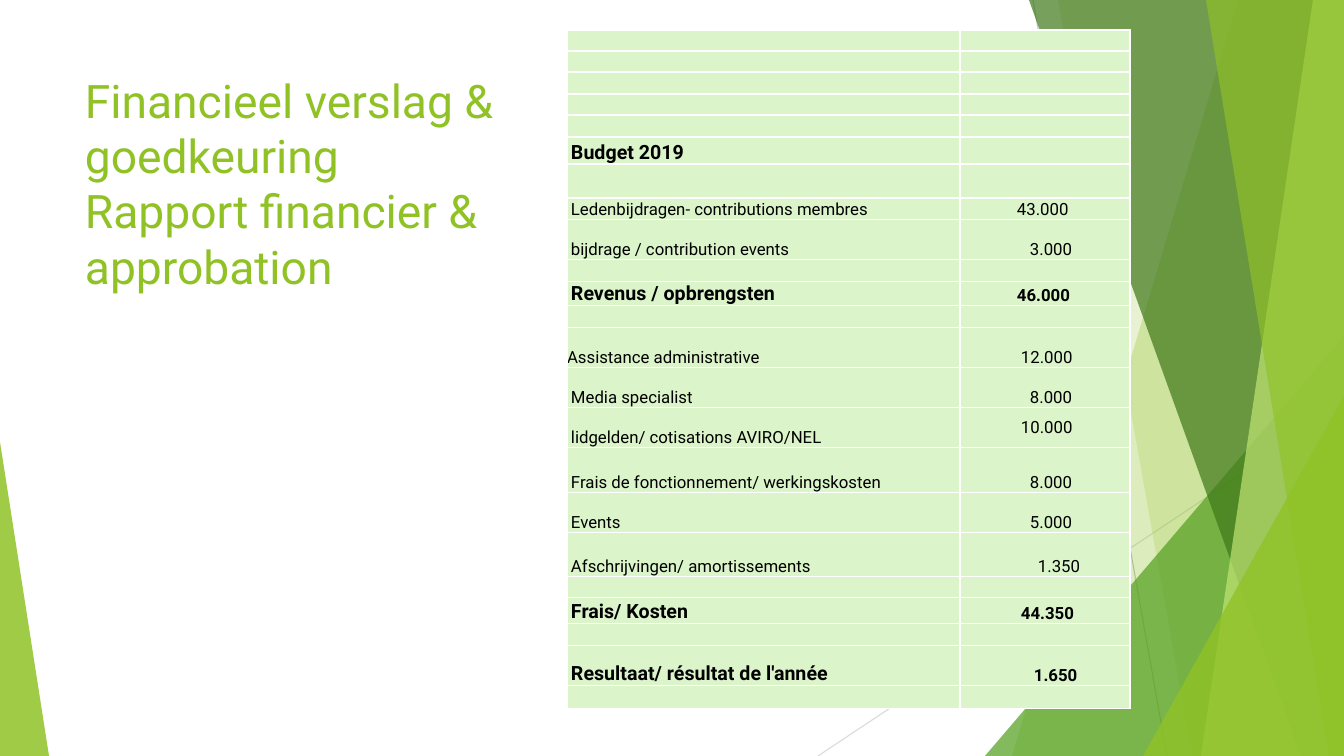
from lxml import etree
from pptx import Presentation
from pptx.dml.color import RGBColor
from pptx.enum import shapes, text
from pptx.oxml import ns
from pptx.util import Pt

SCALE = 914400 / 100.8
WIDTH, HEIGHT = 1344, 756
FONT = "Roboto"
GREEN = "90C226"
COLUMN_WIDTHS = (393, 170)

# row height, label, label inset, amount, amount inset, bold
BUDGET_ROWS = [
    (21,), (21,), (22,), (21,), (22,),
    (27, "Budget 2019", 4, "", 0, True),
    (34,),
    (22, "Ledenbijdragen- contributions membres", 4, "43.000", 57, False),
    (40, "bijdrage / contribution events", 4, "3.000", 70, False),
    (22,),
    (23, "Revenus / opbrengsten", 4, "46.000", 57, True),
    (22,),
    (40, "Assistance administrative", 0, "12.000", 61, False),
    (40, "Media specialist", 4, "8.000", 70, False),
    (40, "lidgelden/ cotisations AVIRO/NEL", 4, "10.000", 61, False),
    (45, "Frais de fonctionnement/ werkingskosten", 4, "8.000", 70, False),
    (40, "Events", 4, "5.000", 70, False),
    (44, "Afschrijvingen/ amortissements", 4, "1.350", 78, False),
    (21,),
    (26, "Frais/ Kosten", 4, "44.350", 61, True),
    (22,),
    (40, "Resultaat/ résultat de l'année", 4, "1.650", 74, True),
    (23,),
]


def px(length):
    return round(length * SCALE)


def color(hex_string):
    return RGBColor.from_string(hex_string)


def paint(shape, fill, opacity):
    """Fill a shape with a translucent colour, without outline or shadow."""
    shape.shadow.inherit = False
    shape.line.fill.background()
    shape.fill.solid()
    shape.fill.fore_color.rgb = color(fill)
    srgb = shape.fill._xPr.find(".//" + ns.qn("a:srgbClr"))
    etree.SubElement(srgb, ns.qn("a:alpha")).set("val", str(opacity * 1000))


def add_line(slide, start, end, line_color):
    line = slide.shapes.add_connector(
        shapes.MSO_CONNECTOR.STRAIGHT, *map(px, start + end))
    line.line.color.rgb = color(line_color)
    line.line.width = Pt(0.75)
    etree.SubElement(line._element.spPr, ns.qn("a:effectLst"))


def add_band(slide, top_x, bottom_x, fill, opacity):
    """Add a band from a slanted left edge to the right side of the slide."""
    builder = slide.shapes.build_freeform(top_x, 0, scale=SCALE)
    builder.add_line_segments([(WIDTH, 0), (WIDTH, HEIGHT), (bottom_x, HEIGHT)])
    paint(builder.convert_to_shape(), fill, opacity)


def add_triangle(slide, left, top, width, apex, fill, opacity):
    """Add a triangle standing on the bottom edge of the slide."""
    triangle = slide.shapes.add_shape(
        shapes.MSO_SHAPE.ISOSCELES_TRIANGLE,
        px(left), px(top), px(width), px(HEIGHT - top))
    triangle.adjustments[0] = apex
    paint(triangle, fill, opacity)


def write(paragraph, words, size, font_color="000000", bold=False):
    paragraph.alignment = text.PP_ALIGN.LEFT
    for index, line in enumerate(words.split("\n")):
        if index:
            paragraph.add_line_break()
        run = paragraph.add_run()
        run.text = line
        run.font.name = FONT
        run.font.size = Pt(size)
        run.font.bold = bold
        run.font.color.rgb = color(font_color)


def add_title(slide, words):
    frame = slide.shapes.add_textbox(px(75), px(67), px(545), px(145)).text_frame
    frame.word_wrap = True
    frame.vertical_anchor = text.MSO_ANCHOR.TOP
    write(frame.paragraphs[0], words, size=33, font_color=GREEN)


def add_borders(cell):
    properties = cell._tc.get_or_add_tcPr()
    for index, side in enumerate(("a:lnL", "a:lnR", "a:lnT", "a:lnB")):
        border = etree.Element(ns.qn(side), w=str(Pt(1)))
        fill = etree.SubElement(border, ns.qn("a:solidFill"))
        etree.SubElement(fill, ns.qn("a:srgbClr")).set("val", "FFFFFF")
        properties.insert(index, border)


def fill_cell(cell, words, inset, size, bold):
    cell.margin_left = px(inset)
    cell.margin_right = cell.margin_top = cell.margin_bottom = 0
    cell.vertical_anchor = text.MSO_ANCHOR.BOTTOM
    cell.fill.solid()
    cell.fill.fore_color.rgb = color("DBF4CA")
    add_borders(cell)
    paragraph = cell.text_frame.paragraphs[0]
    if words:
        write(paragraph, words, size, bold=bold)
    else:
        etree.SubElement(paragraph._p, ns.qn("a:endParaRPr")).set("sz", "800")


def add_budget_table(slide):
    heights = [row[0] for row in BUDGET_ROWS]
    table = slide.shapes.add_table(
        len(BUDGET_ROWS), len(COLUMN_WIDTHS), px(567), px(30),
        px(sum(COLUMN_WIDTHS)), px(sum(heights))).table
    table.first_row = table.horz_banding = False
    for column, width in zip(table.columns, COLUMN_WIDTHS):
        column.width = px(width)
    for index, (height, *content) in enumerate(BUDGET_ROWS):
        table.rows[index].height = px(height)
        label, label_inset, amount, amount_inset, bold = content or ("", 0, "", 0, False)
        label_cell, amount_cell = table.rows[index].cells
        fill_cell(label_cell, label, label_inset, 14 if bold else 12, bold)
        fill_cell(amount_cell, amount, amount_inset, 12, bold)
        if amount == "10.000":
            amount_cell.vertical_anchor = text.MSO_ANCHOR.MIDDLE


def add_decoration(slide):
    add_line(slide, (1033, 0), (1167, HEIGHT), "BFBFBF")
    add_line(slide, (WIDTH, 406), (818, HEIGHT), "D9D9D9")
    add_band(slide, 1238, 1012, GREEN, 30)
    add_band(slide, 1058, 1192, GREEN, 20)
    add_triangle(slide, 985, 336, 359, 1, "54A021", 72)
    add_band(slide, 1029, 1301, "3F7819", 70)
    add_band(slide, 1313, 1201, "C0E474", 70)
    add_band(slide, 1206, 1329, GREEN, 65)
    add_triangle(slide, 1143, 396, 201, 1, GREEN, 80)
    add_triangle(slide, 0, 442, 49, 0, GREEN, 85)


def main():
    presentation = Presentation()
    presentation.slide_width = px(WIDTH)
    presentation.slide_height = px(HEIGHT)
    slide = presentation.slides.add_slide(presentation.slide_layouts[6])
    add_decoration(slide)
    add_title(slide, "Financieel verslag & goedkeuring\nRapport financier & approbation")
    add_budget_table(slide)
    presentation.save("out.pptx")


if __name__ == "__main__":
    main()
